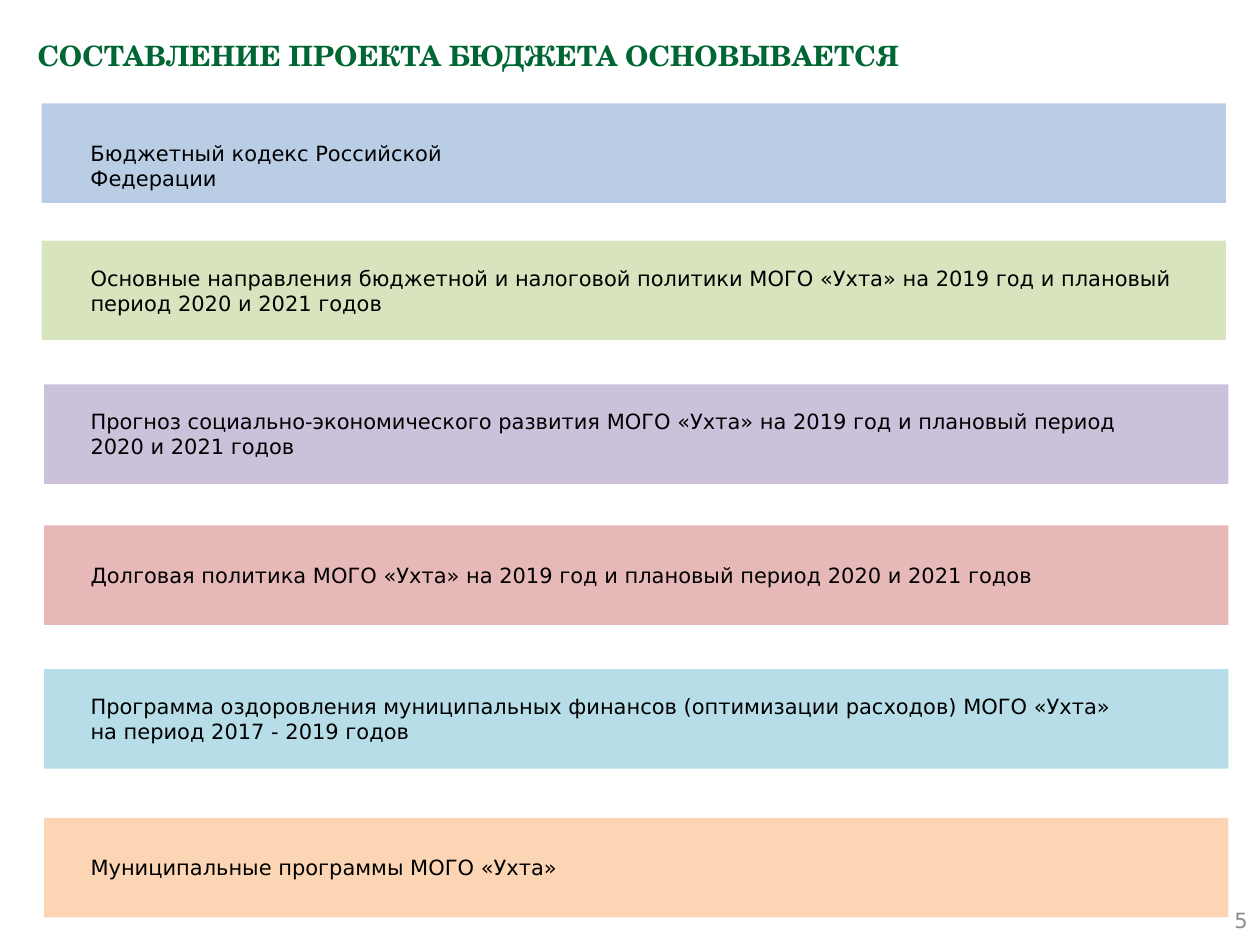
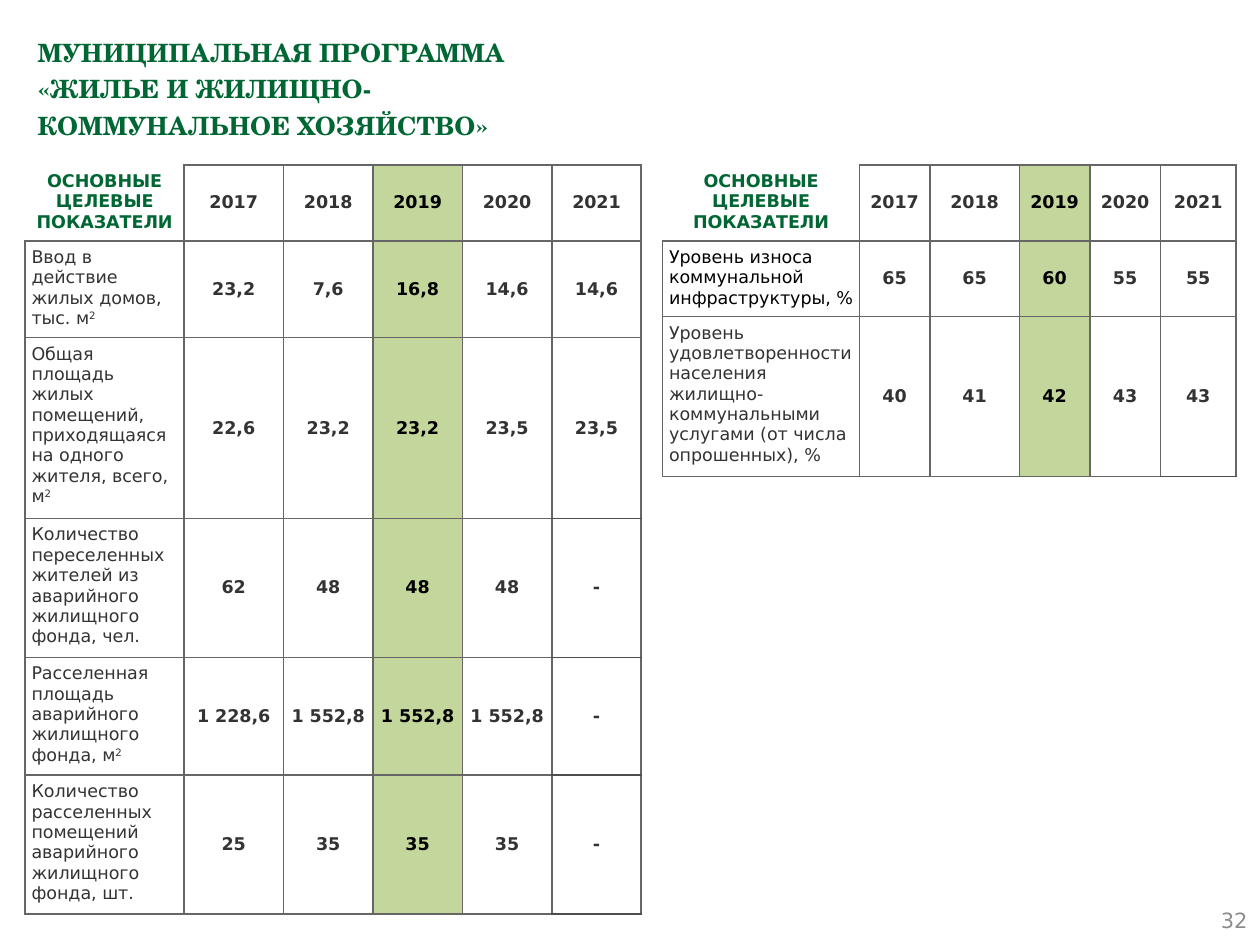
from lxml.etree import SubElement
from pptx import Presentation
from pptx.dml.color import RGBColor
from pptx.enum.shapes import MSO_SHAPE
from pptx.enum.text import MSO_ANCHOR, PP_ALIGN
from pptx.oxml.ns import qn
from pptx.util import Inches, Pt

COLORS = {
    "title": "006633",
    "text": "000000",
    "label": "333333",
    "page": "8C8C8C",
    "border": "666666",
    "dark_border": "4D4D4D",
    "current_year": "C3D69B",
    "blue": "B9CDE5",
    "green": "D7E4BD",
    "purple": "CCC1DA",
    "red": "E6B9B8",
    "cyan": "B7DEE8",
    "orange": "FCD5B5",
}
BODY_FONT = "DejaVu Sans"
TITLE_FONT = "TeX Gyre Schola"
BAR_WIDTH, BAR_HEIGHT = 9.4, 0.79
ROW_HEIGHT = 0.41
CURRENT_YEAR = "2019"
HEADER = ["ОСНОВНЫЕ ЦЕЛЕВЫЕ ПОКАЗАТЕЛИ", "2017", "2018", CURRENT_YEAR, "2020", "2021"]

FOUNDATIONS = [
    ("blue", 0.33, 0.82, 3.97, 1, "Бюджетный кодекс Российской Федерации"),
    ("green", 0.33, 1.91, 8.81, 2,
     "Основные направления бюджетной и налоговой политики МОГО «Ухта» "
     "на 2019 год и плановый период 2020 и 2021 годов"),
    ("purple", 0.35, 3.05, 8.81, 2,
     "Прогноз социально-экономического развития МОГО «Ухта» "
     "на 2019 год и плановый период 2020 и 2021 годов"),
    ("red", 0.35, 4.17, 8.81, 1,
     "Долговая политика МОГО «Ухта» на 2019 год и плановый период 2020 и 2021 годов"),
    ("cyan", 0.35, 5.31, 8.35, 2,
     "Программа оздоровления муниципальных финансов (оптимизации расходов) МОГО «Ухта»\n"
     "на период 2017 - 2019 годов"),
    ("orange", 0.35, 6.49, 9.12, 1, "Муниципальные программы МОГО «Ухта»"),
]

HOUSING = [
    HEADER,
    ["Ввод в действие жилых домов, тыс. м^2", "23,2", "7,6", "16,8", "14,6", "14,6"],
    ["Общая площадь жилых помещений, приходящаяся на одного жителя, всего, м^2",
     "22,6", "23,2", "23,2", "23,5", "23,5"],
    ["Количество переселенных жителей из аварийного жилищного фонда, чел.",
     "62", "48", "48", "48", "-"],
    ["Расселенная площадь аварийного жилищного фонда, м^2",
     "1 228,6", "1 552,8", "1 552,8", "1 552,8", "-"],
    ["Количество расселенных помещений аварийного жилищного фонда, шт.",
     "25", "35", "35", "35", "-"],
]
UTILITIES = [
    HEADER,
    ["Уровень износа коммунальной инфраструктуры, %", "65", "65", "60", "55", "55"],
    ["Уровень удовлетворенности населения жилищно-коммунальными услугами "
     "(от числа опрошенных), %", "40", "41", "42", "43", "43"],
]


def rgb(color):
    return RGBColor.from_string(COLORS[color])


def write_text(frame, text, size=12, color="text", font=BODY_FONT, bold=False,
               align=PP_ALIGN.LEFT, anchor=MSO_ANCHOR.TOP, spacing=None):
    frame.word_wrap = True
    frame.vertical_anchor = anchor
    for index, line in enumerate(text.split("\n")):
        paragraph = frame.add_paragraph() if index else frame.paragraphs[0]
        paragraph.alignment = align
        paragraph.line_spacing = spacing
        base, _, superscript = line.partition("^")
        for part in filter(None, (base, superscript)):
            run = paragraph.add_run()
            run.text = part
            run.font.size = Pt(size)
            run.font.name = font
            run.font.bold = bold
            run.font.color.rgb = rgb(color)
        if superscript:
            run._r.get_or_add_rPr().set("baseline", "30000")


def add_label(slide, text, left, top, width, height, **style):
    label = slide.shapes.add_textbox(Inches(left), Inches(top), Inches(width), Inches(height))
    write_text(label.text_frame, text, **style)


def add_page(deck, title, number, title_size):
    slide = deck.slides.add_slide(deck.slide_layouts[6])
    add_label(slide, title, 0.2, 0.2, 9.61, 0.79, size=title_size, color="title",
              font=TITLE_FONT, bold=True, spacing=1.2)
    add_label(slide, str(number), 7.67, 7.1, 2.33, 0.4, color="page",
              align=PP_ALIGN.RIGHT, anchor=MSO_ANCHOR.MIDDLE)
    return slide


def add_foundation(slide, color, left, top, text_width, lines, text):
    bar = slide.shapes.add_shape(MSO_SHAPE.PENTAGON, Inches(left), Inches(top),
                                 Inches(BAR_WIDTH), Inches(BAR_HEIGHT))
    bar.adjustments[0] = 0
    bar.shadow.inherit = False
    bar.fill.solid()
    bar.fill.fore_color.rgb = rgb(color)
    bar.line.fill.background()
    text_height = 0.1 + 0.2 * lines
    add_label(slide, text, 0.62, top + (BAR_HEIGHT - text_height) / 2, text_width, text_height)


def set_borders(cell, **sides):
    properties = cell._tc.get_or_add_tcPr()
    for side in "LRTB":
        color = sides[side]
        border = SubElement(properties, qn(f"a:ln{side}"), w=str(Pt(1)))
        if color:
            fill = SubElement(border, qn("a:solidFill"))
            SubElement(fill, qn("a:srgbClr"), val=COLORS[color])
        else:
            SubElement(border, qn("a:noFill"))


def format_cell(cell, text, row, column):
    is_corner = row == column == 0
    is_label = column == 0 and row > 0
    is_current = HEADER[column] == CURRENT_YEAR
    is_last = column == len(HEADER) - 1
    outer = None if is_corner else "border"
    set_borders(cell, L=outer, R="border",
                T="dark_border" if is_last and row > 2 else outer,
                B="dark_border" if is_last and row > 1 else "border")
    if is_current:
        cell.fill.solid()
        cell.fill.fore_color.rgb = rgb("current_year")
    else:
        cell.fill.background()
    cell.margin_left = cell.margin_right = Inches(0.05)
    cell.margin_top = cell.margin_bottom = Inches(0.05)
    if is_corner:
        color = "title"
    elif is_current or text == UTILITIES[1][0]:
        color = "text"
    else:
        color = "label"
    write_text(cell.text_frame, text, size=10, color=color, bold=not is_label,
               align=PP_ALIGN.LEFT if is_label else PP_ALIGN.CENTER)
    cell.vertical_anchor = MSO_ANCHOR.MIDDLE if column else MSO_ANCHOR.TOP


def add_indicators(slide, indicators, left, height, widths):
    frame = slide.shapes.add_table(len(indicators), len(widths), Inches(left), Inches(1.31),
                                   Inches(sum(widths)), Inches(height))
    table = frame.table
    table.first_row = table.horz_banding = False
    for column, width in zip(table.columns, widths):
        column.width = Inches(width)
    for row, values in enumerate(indicators):
        table.rows[row].height = Inches(ROW_HEIGHT)
        for column, value in enumerate(values):
            format_cell(table.cell(row, column), value, row, column)
    frame.height = Inches(height)


def main():
    deck = Presentation()
    deck.slide_width, deck.slide_height = Inches(10), Inches(7.5)

    basis = add_page(deck, "СОСТАВЛЕНИЕ ПРОЕКТА БЮДЖЕТА ОСНОВЫВАЕТСЯ", 5, 16)
    for foundation in FOUNDATIONS:
        add_foundation(basis, *foundation)

    program = add_page(
        deck, "МУНИЦИПАЛЬНАЯ ПРОГРАММА\n«ЖИЛЬЕ И ЖИЛИЩНО-\nКОММУНАЛЬНОЕ ХОЗЯЙСТВО»", 32, 14.4)
    add_indicators(program, HOUSING, 0.2, 5.93, [1.26, 0.79] + [0.71] * 4)
    add_indicators(program, UTILITIES, 5.26, 2.47, [1.56, 0.56, 0.71, 0.56, 0.56, 0.6])

    deck.save("out.pptx")


if __name__ == "__main__":
    main()
